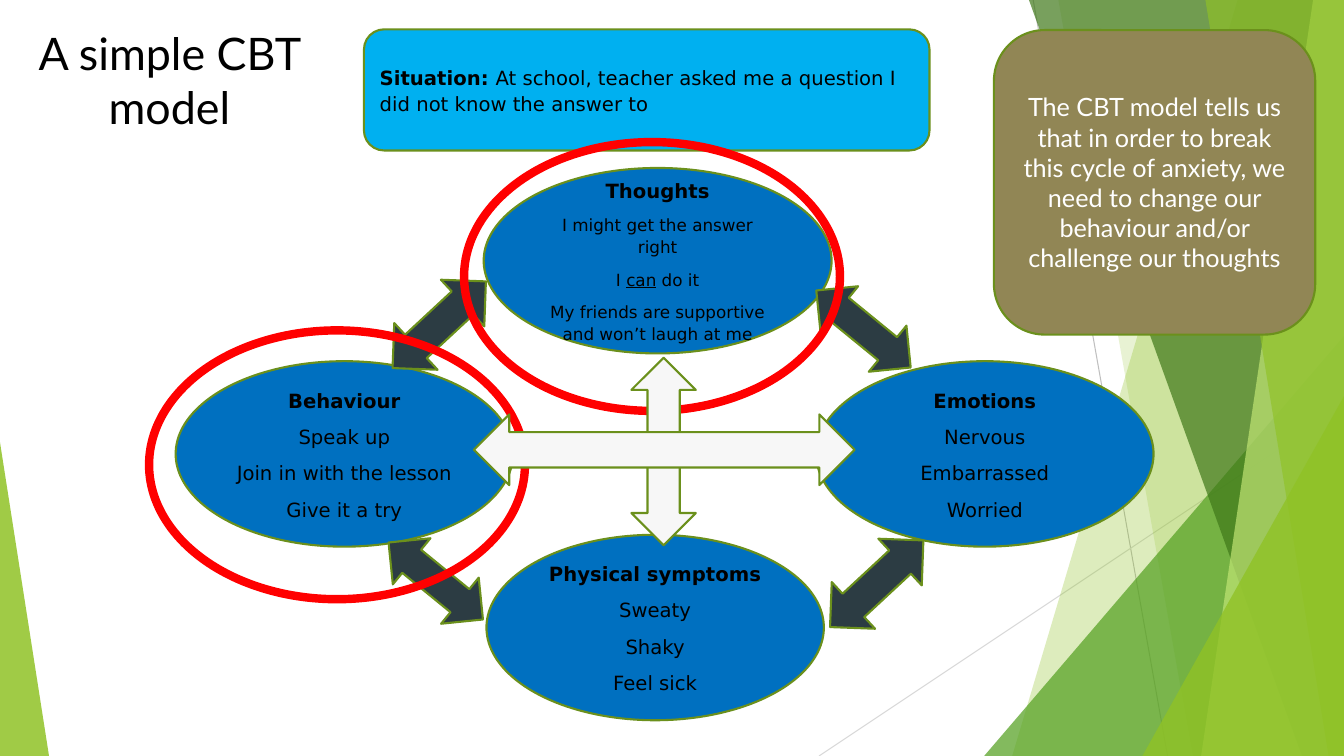
from dataclasses import dataclass
from lxml.etree import SubElement
from pptx import Presentation
from pptx.dml.color import RGBColor
from pptx.enum.shapes import MSO_CONNECTOR, MSO_SHAPE as Shape
from pptx.enum.text import MSO_ANCHOR as Anchor, MSO_AUTO_SIZE as AutoSize, PP_ALIGN as Align
from pptx.oxml.ns import qn
from pptx.util import Pt


@dataclass(frozen=True)
class Theme:
    """Colours, fonts and type sizes of the slide."""
    black: str = "000000"
    white: str = "FFFFFF"
    lime: str = "90C226"
    pale_lime: str = "C0E474"
    green: str = "54A021"
    dark_green: str = "3F7819"
    outline: str = "6B901C"
    situation: str = "00B0F0"
    stage: str = "0070C0"
    link: str = "2C3C43"
    cross: str = "F7F7F7"
    ring: str = "FF0000"
    note: str = "918655"
    hairlines: tuple = ("BFBFBF", "D9D9D9")
    diagram_font: str = "DejaVu Sans"
    slide_font: str = "Lato"
    title_size: int = 32
    note_size: int = 18
    body_size: int = 14
    small_size: int = 12


THEME = Theme()


def apply(target, formats):
    """Set every attribute in formats on target."""
    for name, value in formats.items():
        setattr(target, name, value)


def points(*lengths):
    """Turn numbers into point lengths."""
    return [Pt(length) for length in lengths]


def inside(box, left, top, width, height):
    """Offset a rectangle by the corner of its box."""
    return box[0] + left, box[1] + top, width, height


def paint(shape, fill, alpha=None, line=THEME.outline, weight=1.5):
    """Give a shape its fill, opacity and outline, without shadow."""
    shape.shadow.inherit = False
    if fill:
        shape.fill.solid()
        shape.fill.fore_color.rgb = RGBColor.from_string(fill)
    else:
        shape.fill.background()
    if alpha:
        color = shape.fill._xPr.find(".//" + qn("a:srgbClr"))
        SubElement(color, qn("a:alpha")).set("val", str(alpha * 1000))
    if line:
        apply(shape.line, {"width": Pt(weight)})
        shape.line.color.rgb = RGBColor.from_string(line)
    else:
        shape.line.fill.background()


def add_preset(slide, kind, box, fill, rotation=0, **look):
    """Add one painted preset shape."""
    shape = slide.shapes.add_shape(kind, *points(*box))
    shape.rotation = rotation
    paint(shape, fill, **look)
    return shape


def write(shape, paragraphs, font, color, frame_formats, paragraph_formats):
    """Fill a shape with paragraphs, each a list of (text, font formats) runs."""
    frame = shape.text_frame
    apply(frame, {"word_wrap": True, **frame_formats})
    for index, runs in enumerate(paragraphs):
        paragraph = frame.add_paragraph() if index else frame.paragraphs[0]
        apply(paragraph, paragraph_formats)
        for text, formats in runs:
            run = paragraph.add_run()
            run.text = text
            apply(run.font, {"name": font, **formats})
            run.font.color.rgb = RGBColor.from_string(color)


def write_diagram(shape, paragraphs, align):
    """Write text in the style of the diagram."""
    write(shape, paragraphs, THEME.diagram_font, THEME.black, {"vertical_anchor": Anchor.MIDDLE},
          {"alignment": align, "line_spacing": 1.07, "space_after": Pt(8)})


def add_facet(slide, box, top_x, bottom_x, color, alpha):
    """Draw a slanted band that reaches the right edge of the box."""
    left, top, width, height = box
    right, bottom = left + width, top + height
    corners = [(right, top), (right, bottom), (left + bottom_x, bottom)]
    builder = slide.shapes.build_freeform(*points(left + top_x, top), scale=1.0)
    builder.add_line_segments([points(*corner) for corner in corners], close=True)
    paint(builder.convert_to_shape(), color, alpha, line=None)


def add_corner(slide, box, width, height, peak, color, alpha):
    """Draw a right triangle in a lower corner of the box; peak 1 is the right one."""
    place = inside(box, (box[2] - width) * peak, box[3] - height, width, height)
    shape = add_preset(slide, Shape.ISOSCELES_TRIANGLE, place, color, alpha=alpha, line=None)
    shape.adjustments[0] = peak


def add_backdrop(slide, box):
    """Draw the hairlines and the translucent green facets."""
    left, top, width, height = box
    ends = [(738, 0, 834, height), (width, 290, 585, height)]
    for color, (x1, y1, x2, y2) in zip(THEME.hairlines, ends):
        hairline = slide.shapes.add_connector(
            MSO_CONNECTOR.STRAIGHT, *points(left + x1, top + y1, left + x2, top + y2))
        hairline.line.width = Pt(0.75)
        hairline.line.color.rgb = RGBColor.from_string(color)
        SubElement(hairline._element.spPr, qn("a:effectLst"))
    pieces = [
        (add_facet, 884, 723, THEME.lime, 30),
        (add_facet, 756, 852, THEME.lime, 20),
        (add_corner, 257, 300, 1, THEME.green, 72),
        (add_facet, 735, 930, THEME.dark_green, 70),
        (add_facet, 938, 858, THEME.pale_lime, 70),
        (add_facet, 861, 949, THEME.lime, 65),
        (add_corner, 144, 257, 1, THEME.lime, 80),
        (add_corner, 35, 224, 0, THEME.lime, 85),
    ]
    for add_piece, *details in pieces:
        add_piece(slide, box, *details)


def add_situation(slide, box):
    """Add the box that names the situation."""
    size = {"size": Pt(THEME.body_size)}
    shape = add_preset(slide, Shape.ROUNDED_RECTANGLE, box, THEME.situation)
    write_diagram(shape, [[
        ("Situation: ", {**size, "bold": True}),
        ("At school, teacher asked me a question I did not know the answer to", size)]], Align.LEFT)


def add_stage(slide, box, heading, lines, size):
    """Add one oval with a bold heading and its lines."""
    shape = add_preset(slide, Shape.FLOWCHART_CONNECTOR, box, THEME.stage)
    body = [[(text, {"size": Pt(size), "underline": text == "can"}) for text in line]
            for line in lines]
    title = [(heading, {"size": Pt(THEME.body_size), "bold": True})]
    write_diagram(shape, [title, *body], Align.CENTER)


def add_cycle(slide, box):
    """Draw the four stages, the arrows between them and the two rings."""
    stages = [
        (239.5, 19, 248.5, "Thoughts", THEME.small_size,
         [["I might get the answer right"], ["I ", "can", " do it"],
          ["My friends are supportive and won’t laugh at me"]]),
        (477, 157, 241, "Emotions", THEME.body_size, [["Nervous"], ["Embarrassed"], ["Worried"]]),
        (241.5, 281, 241, "Physical symptoms", THEME.body_size,
         [["Sweaty"], ["Shaky"], ["Feel sick"]]),
        (19.5, 157, 241, "Behaviour", THEME.body_size,
         [["Speak up"], ["Join in with the lesson"], ["Give it a try"]]),
    ]
    for left, top, width, heading, size, lines in stages:
        add_stage(slide, inside(box, left, top, width, 132.5), heading, lines, size)
    rising, falling = (45.5, 91, 47.1), (42.5, 87, 129.2)
    links = [(185, 85.5, rising), (489.5, 90.5, falling),
             (497.5, 270.5, rising), (184, 270.5, falling)]
    for left, top, (width, height, rotation) in links:
        add_preset(slide, Shape.UP_DOWN_ARROW, inside(box, left, top, width, height),
                   THEME.link, rotation)
    for left, top in [(225.5, 0.5), (0.5, 135)]:
        add_preset(slide, Shape.OVAL, inside(box, left, top, 268.5, 192), None,
                   line=THEME.ring, weight=6)
    for *place, rotation in [(301, 198.5, 134, 46, 90), (232.5, 195, 272, 50.5, 180)]:
        add_preset(slide, Shape.LEFT_RIGHT_ARROW, inside(box, *place), THEME.cross, rotation)


def add_note(slide, box):
    """Add the rounded panel with the conclusion."""
    shape = add_preset(slide, Shape.ROUNDED_RECTANGLE, box, THEME.note)
    text = ("The CBT model tells us that in order to break this cycle of anxiety, "
            "we need to change our behaviour and/or challenge our thoughts")
    write(shape, [[(text, {"size": Pt(THEME.note_size)})]], THEME.slide_font, THEME.white,
          {"vertical_anchor": Anchor.MIDDLE}, {"alignment": Align.CENTER})


def add_title(slide, box):
    """Add the slide title."""
    shape = slide.shapes.add_textbox(*points(*box))
    write(shape, [[("A simple CBT model", {"size": Pt(THEME.title_size)})]], THEME.slide_font,
          THEME.black, {"auto_size": AutoSize.SHAPE_TO_FIT_TEXT}, {"alignment": Align.CENTER})


def main():
    """Build the slide and save it."""
    presentation = Presentation()
    apply(presentation, {"slide_width": Pt(960), "slide_height": Pt(540)})
    slide = presentation.slides.add_slide(presentation.slide_layouts[6])
    add_backdrop(slide, (0, 0, 960, 540))
    add_situation(slide, (260, 21, 404, 86.5))
    add_cycle(slide, (106, 101, 718, 413))
    add_note(slide, (710, 21.5, 229.5, 217.5))
    add_title(slide, (18.5, 15, 205, 85))
    presentation.save("out.pptx")


if __name__ == "__main__":
    main()
